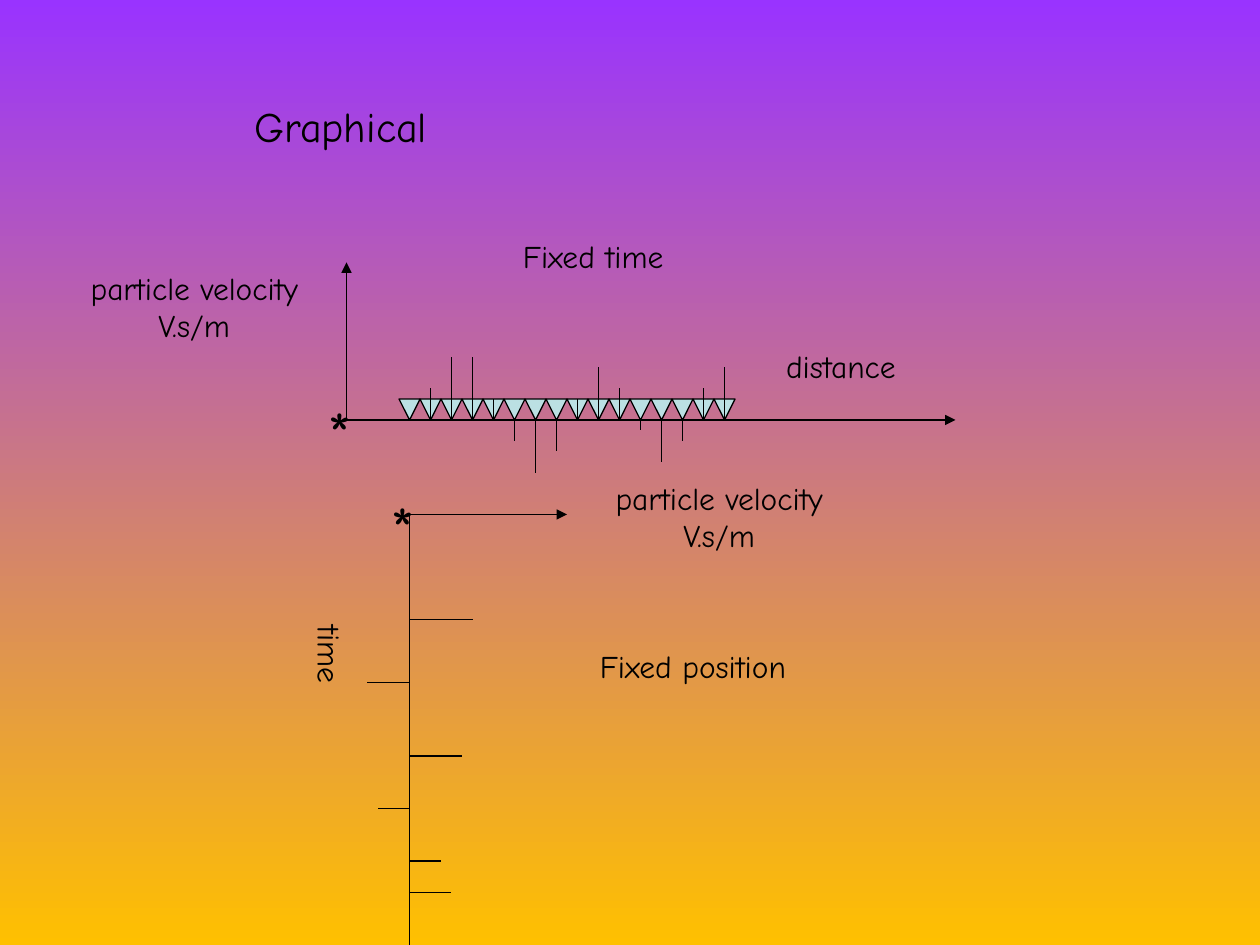
from dataclasses import dataclass

from lxml.etree import SubElement
from pptx import Presentation
from pptx.dml.color import RGBColor
from pptx.enum.shapes import MSO_CONNECTOR, MSO_SHAPE
from pptx.enum.text import MSO_ANCHOR, MSO_AUTO_SIZE, PP_ALIGN
from pptx.oxml.ns import qn
from pptx.util import Pt


@dataclass(frozen=True)
class Theme:
    font: str = "Comic Neue"
    ink: RGBColor = RGBColor(0x00, 0x00, 0x00)
    geophone: RGBColor = RGBColor(0xBB, 0xE0, 0xE3)
    top: RGBColor = RGBColor(0x99, 0x33, 0xFF)
    bottom: RGBColor = RGBColor(0xFF, 0xC0, 0x00)
    title_size: int = 24
    label_size: int = 18
    source_size: int = 36
    thin: float = 0.75
    axis: float = 1


THEME = Theme()
WIDTH, HEIGHT = 720, 540
UNIT = 6  # points per unit of particle velocity
SPACING = 12  # points between geophones

TITLE = ("Graphical", (138, 54, 390, 36))
VELOCITY = ["particle velocity", "V.s/m"]
# lines, (left, top, width, height), rotation
LABELS = [
    (VELOCITY, (36, 150, 150, 50), 0),
    (VELOCITY, (336, 270, 150, 50), 0),
    (["time"], (162.5, 359.5, 52, 29), 90),
    (["Fixed time"], (282, 132, 114, 29), 0),
    (["distance"], (438, 195, 85, 29), 0),
    (["Fixed position"], (306, 366, 180, 29), 0),
]
SOURCES = [(180, 222, 66, 50), (216, 276, 66, 50)]

DISTANCE_ORIGIN = (198, 240)
FIRST_GEOPHONE = 234
# velocity at each geophone, positive upwards
GEOPHONE_VELOCITIES = [0, 3, 6, 6, 2, -2, -5, -3, 2, 5, 3, -1, -4, -2, 3, 5]

TIME_ORIGIN = (234, 294)
# (time in points below the origin, velocity, positive to the right)
TIME_VELOCITIES = [(60, 6), (96, -4), (138, 5), (168, -3), (198, 3), (216, 4)]


def add_line(slide, start, end, weight=THEME.thin, arrow=False):
    points = [Pt(value) for value in (*start, *end)]
    connector = slide.shapes.add_connector(MSO_CONNECTOR.STRAIGHT, *points)
    connector.line.color.rgb = THEME.ink
    connector.line.width = Pt(weight)
    if arrow:
        SubElement(connector.line._get_or_add_ln(), qn("a:tailEnd"), type="triangle")
    SubElement(connector._element.spPr, qn("a:effectLst"))


def write(shape, lines, size, alignment):
    frame = shape.text_frame
    frame.word_wrap = True
    frame.auto_size = MSO_AUTO_SIZE.NONE
    frame.vertical_anchor = MSO_ANCHOR.TOP
    frame.text = "\n".join(lines)
    for paragraph in frame.paragraphs:
        paragraph.alignment = alignment
        paragraph.font.name = THEME.font
        paragraph.font.size = Pt(size)
        paragraph.font.color.rgb = THEME.ink


def add_text(slide, lines, box, size, alignment, rotation=0):
    shape = slide.shapes.add_textbox(*map(Pt, box))
    shape.rotation = rotation
    write(shape, lines, size, alignment)


def set_title(slide):
    text, box = TITLE
    title = slide.shapes.title
    title.left, title.top, title.width, title.height = map(Pt, box)
    write(title, [text], THEME.title_size, PP_ALIGN.LEFT)


def set_background(slide):
    fill = slide.background.fill
    fill.gradient()
    fill.gradient_angle = 270  # counter-clockwise, so top to bottom
    for stop, color in zip(fill.gradient_stops, (THEME.top, THEME.bottom)):
        stop.color.rgb = color


def add_geophone(slide, x, tip):
    triangle = slide.shapes.add_shape(
        MSO_SHAPE.ISOSCELES_TRIANGLE,
        Pt(x - SPACING / 2), Pt(tip - SPACING), Pt(SPACING), Pt(SPACING),
    )
    triangle.rotation = 180
    triangle.shadow.inherit = False
    triangle.fill.solid()
    triangle.fill.fore_color.rgb = THEME.geophone
    triangle.line.color.rgb = THEME.ink
    triangle.line.width = Pt(THEME.thin)


def draw_fixed_time(slide):
    x0, y0 = DISTANCE_ORIGIN
    add_line(slide, (x0, y0), (546, y0), THEME.axis, arrow=True)
    add_line(slide, (x0, y0), (x0, 150), arrow=True)
    positions = [FIRST_GEOPHONE + i * SPACING for i in range(len(GEOPHONE_VELOCITIES))]
    for x in positions:
        add_geophone(slide, x, y0)
    for x, velocity in zip(positions, GEOPHONE_VELOCITIES):
        if velocity:
            add_line(slide, (x, y0), (x, y0 - velocity * UNIT))


def draw_fixed_position(slide):
    x0, y0 = TIME_ORIGIN
    add_line(slide, (x0, y0), (x0, HEIGHT), THEME.axis)
    add_line(slide, (x0, y0), (324, y0), arrow=True)
    for time, velocity in TIME_VELOCITIES:
        add_line(slide, (x0, y0 + time), (x0 + velocity * UNIT, y0 + time))


def main():
    presentation = Presentation()
    presentation.slide_width, presentation.slide_height = Pt(WIDTH), Pt(HEIGHT)
    slide = presentation.slides.add_slide(presentation.slide_layouts.get_by_name("Title Only"))
    set_background(slide)
    set_title(slide)
    draw_fixed_time(slide)
    draw_fixed_position(slide)
    for lines, box, rotation in LABELS:
        add_text(slide, lines, box, THEME.label_size, PP_ALIGN.CENTER, rotation)
    for box in SOURCES:
        add_text(slide, ["*"], box, THEME.source_size, PP_ALIGN.LEFT)
    presentation.save("out.pptx")


if __name__ == "__main__":
    main()
